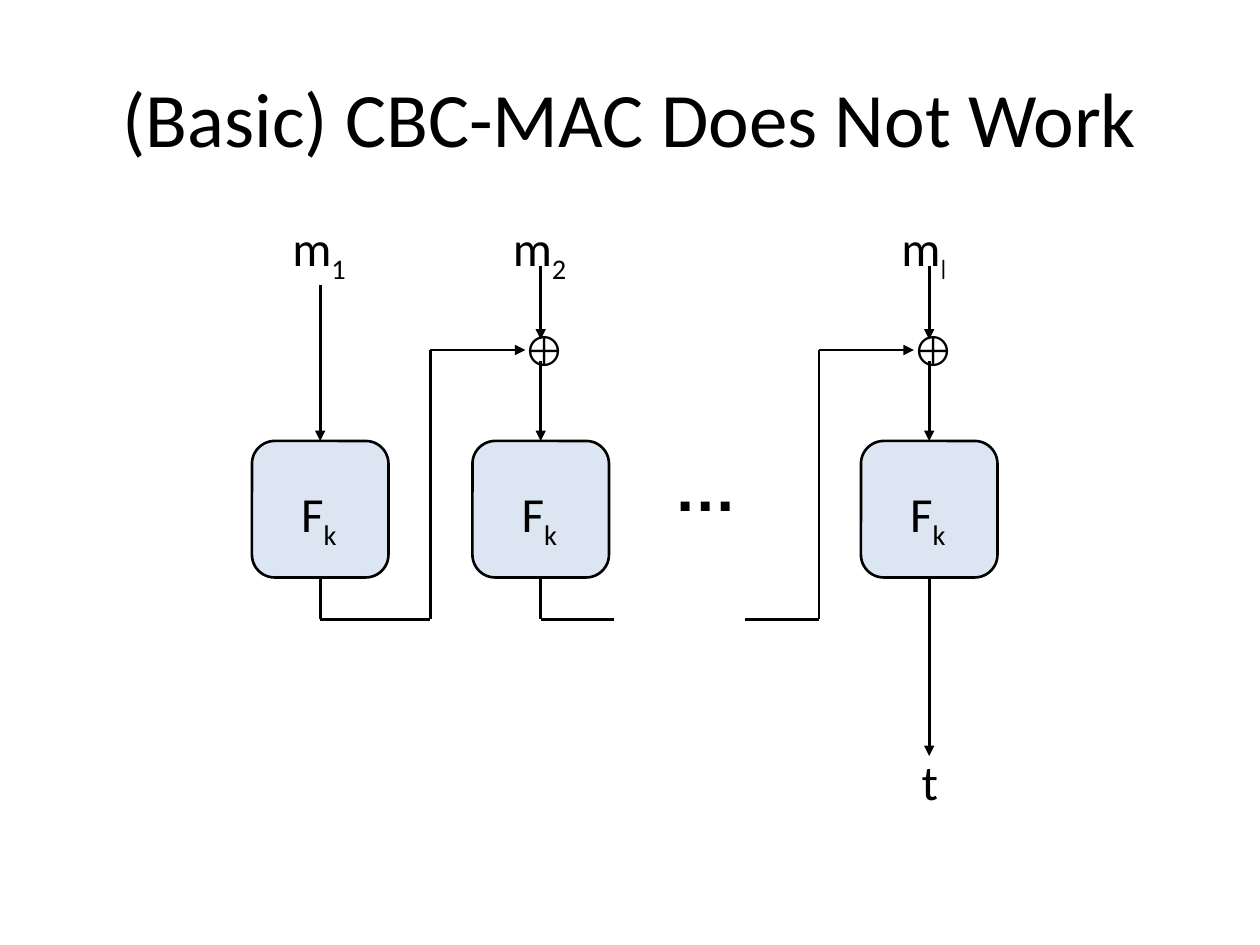
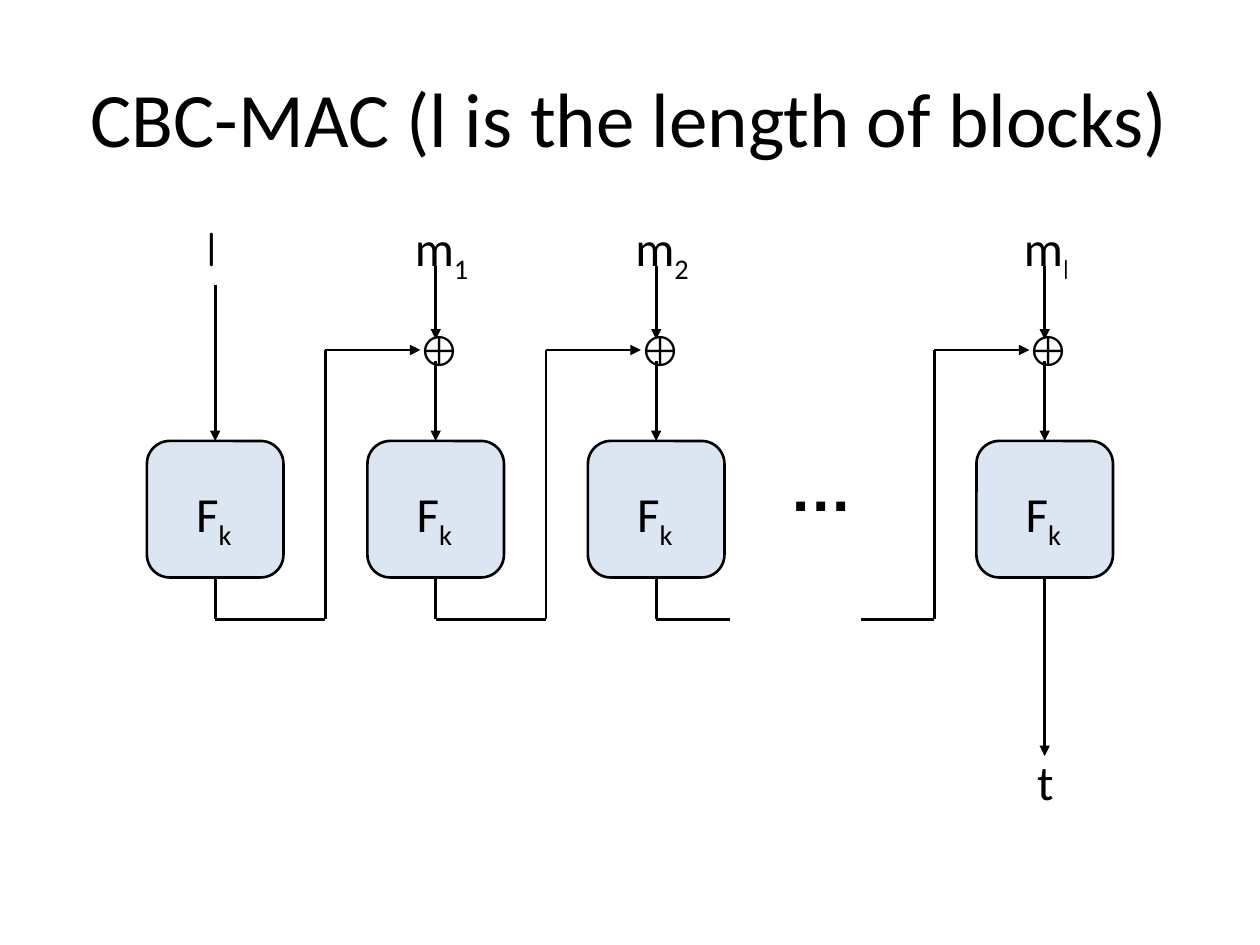
from lxml import etree
from pptx import Presentation
from pptx.dml.color import RGBColor
from pptx.enum import shapes, text
from pptx.oxml.ns import qn
from pptx.util import Pt

BLACK = RGBColor(0x00, 0x00, 0x00)
PALE_BLUE = RGBColor(0xDC, 0xE6, 0xF2)

BODY = {"name": "Calibri", "size": Pt(28)}
SCRIPT_L = {"name": "Comic Neue", "size": Pt(28)}
SYMBOL = {"name": "Arial", "size": Pt(24)}
DOTS = {"name": "Arial", "size": Pt(36), "bold": True}
TITLE = {"name": "Calibri", "size": Pt(44)}

BLOCK_SIZE = 78
BLOCK_TOP = 252
BLOCK_PITCH = 126
GAP_PITCH = 222     # from the last block before the dots to the final block
ELBOW = BLOCK_PITCH / 2
LABEL_TOP = 121
TEXT_HEIGHT = 41
XOR_Y = 200
RETURN_Y = 354
TAG_Y = 432
TOP, BOTTOM = 0, 2  # connection sites of a block


def add_text(page, left, top, width, height, spans, wrap=False):
    """Spans are (wording, font format, is subscript)."""
    box = page.shapes.add_textbox(Pt(left), Pt(top), Pt(width), Pt(height))
    frame = box.text_frame
    frame.word_wrap = wrap
    if not wrap:
        frame.auto_size = text.MSO_AUTO_SIZE.SHAPE_TO_FIT_TEXT
    para = frame.paragraphs[0]
    for wording, formats, subscript in spans:
        span = para.add_run()
        span.text = wording
        span.font.color.rgb = BLACK
        for name, value in formats.items():
            setattr(span.font, name, value)
        if subscript:
            span.font._element.set("baseline", "-25000")
    return box


def add_title(page, wording):
    box = add_text(page, 36, 21.6, 648, 90, [(wording, TITLE, False)], wrap=True)
    box.text_frame.vertical_anchor = text.MSO_ANCHOR.MIDDLE
    box.text_frame.paragraphs[0].alignment = text.PP_ALIGN.CENTER


def add_line(page, start, end, arrow=False):
    line = page.shapes.add_connector(
        shapes.MSO_CONNECTOR.STRAIGHT, *(Pt(value) for value in start + end))
    line.line.color.rgb = BLACK
    line.line.width = Pt(1.5)
    if arrow:
        etree.SubElement(line.line._get_or_add_ln(), qn("a:tailEnd"), type="triangle")
    etree.SubElement(line._element.spPr, qn("a:effectLst"))
    return line


def add_block(page, x):
    """Draw one keyed function centred on x."""
    block = page.shapes.add_shape(
        shapes.MSO_SHAPE.ROUNDED_RECTANGLE, Pt(x - BLOCK_SIZE / 2), Pt(BLOCK_TOP),
        Pt(BLOCK_SIZE), Pt(BLOCK_SIZE))
    block.shadow.inherit = False
    block.fill.solid()
    block.fill.fore_color.rgb = PALE_BLUE
    block.line.color.rgb = BLACK
    block.line.width = Pt(1.5)
    add_text(page, x - 18, 273, 36, TEXT_HEIGHT, [("F", BODY, False), ("k", BODY, True)])
    return block


def add_input(page, x, block, has_xor):
    """Lead the message down into the block, through an XOR where there is one."""
    if has_xor:
        add_line(page, (x, 152), (x, 194), arrow=True)
        add_text(page, x - 16.7, 181.7, 33, 36.7, [("⊕", SYMBOL, False)])
    start = 206.5 if has_xor else 162.7
    line = add_line(page, (x, start), (x, BLOCK_TOP), arrow=True)
    line.end_connect(block, TOP)


def add_output(page, x, block, end, arrow=False):
    line = add_line(page, (x, BLOCK_TOP + BLOCK_SIZE), (x, end), arrow)
    line.begin_connect(block, BOTTOM)


def add_feedback(page, start, x):
    """Lead the chain from start up and into the XOR at x."""
    turn = x - ELBOW
    add_line(page, (start, RETURN_Y), (turn, RETURN_Y))
    add_line(page, (turn, RETURN_Y), (turn, XOR_Y))
    add_line(page, (turn, XOR_Y), (x - 8.8, XOR_Y), arrow=True)


def add_chain(page, first_x, labels, label_shift):
    """Labels are (width, spans), one for each block; the dots precede the last."""
    centers = [first_x + BLOCK_PITCH * i for i in range(len(labels) - 1)]
    before_dots = centers[-1]
    last = before_dots + GAP_PITCH
    centers.append(last)

    for i, (x, (width, spans)) in enumerate(zip(centers, labels)):
        block = add_block(page, x)
        shift = label_shift if len(spans) > 1 else width / 2
        add_text(page, x - shift, LABEL_TOP, width, TEXT_HEIGHT, spans)
        add_input(page, x, block, has_xor=i > 0)
        if x == last:
            add_output(page, x, block, TAG_Y, arrow=True)
        else:
            add_output(page, x, block, RETURN_Y)
        if i > 0:
            add_feedback(page, last - 105 if x == last else centers[i - 1], x)

    add_line(page, (before_dots, RETURN_Y), (before_dots + 42, RETURN_Y))
    add_text(page, before_dots + 69, 252.5, 51, 51, [("…", DOTS, False)])
    add_text(page, last - 11.5, 426, 24, TEXT_HEIGHT, [("t", BODY, False)])


def message(index, width=46.8, index_format=BODY):
    return width, [("m", BODY, False), (index, index_format, True)]


def main():
    deck = Presentation()
    deck.slide_width, deck.slide_height = Pt(720), Pt(540)
    messages = [message("1"), message("2"), message("l", 43.2, SCRIPT_L)]
    length = (24, [("l", SCRIPT_L, False)])
    pages = [
        ("(Basic) CBC-MAC Does Not Work", 183, messages, 23),
        ("CBC-MAC (l is the length of blocks)", 123, [length] + messages, 19),
    ]
    for title, first_x, labels, label_shift in pages:
        page = deck.slides.add_slide(deck.slide_layouts[6])
        add_title(page, title)
        add_chain(page, first_x, labels, label_shift)
    deck.save("out.pptx")


if __name__ == "__main__":
    main()
